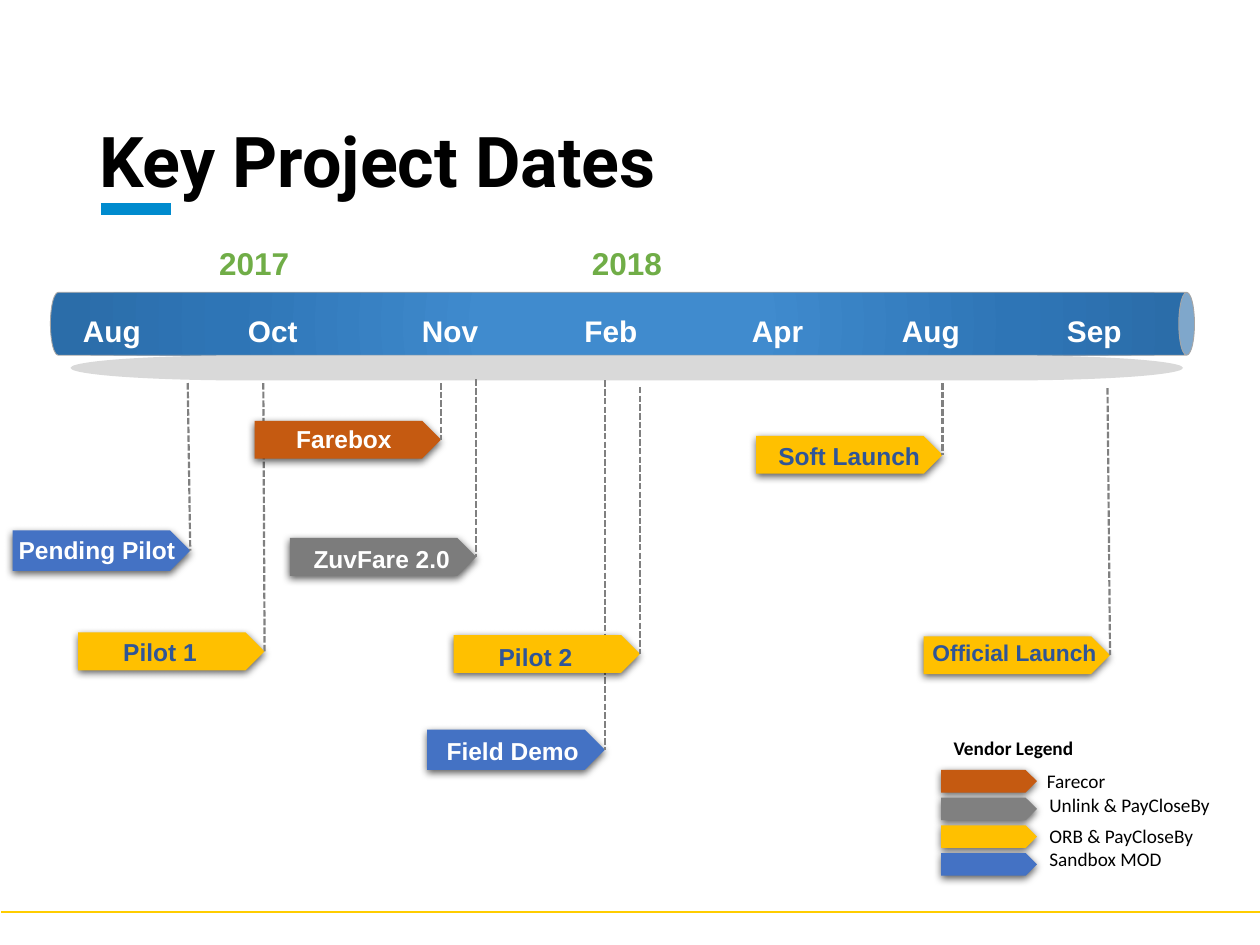
from dataclasses import dataclass

import lxml.etree
import pptx
import pptx.dml.color
import pptx.enum.dml
import pptx.enum.shapes
import pptx.enum.text
import pptx.oxml
import pptx.oxml.ns
import pptx.util

Inches = pptx.util.Inches
Pt = pptx.util.Pt
SHAPE = pptx.enum.shapes.MSO_SHAPE
ALIGN = pptx.enum.text.PP_ALIGN
ANCHOR = pptx.enum.text.MSO_ANCHOR
DASH = pptx.enum.dml.MSO_LINE
qn = pptx.oxml.ns.qn
NS = pptx.oxml.ns.nsdecls("a")

ORANGE, GRAY, YELLOW, BLUE = "C55A11", "808080", "FFC000", "4472C4"
WHITE, BLACK, NAVY, GREEN = "FFFFFF", "000000", "2F5597", "70AD47"


@dataclass
class Milestone:
    text: str
    x: float
    y: float
    w: float
    h: float
    fill: str
    color: str
    label_x: float
    label_y: float
    line_x: float
    line_y: float
    size: float = 14


@dataclass
class LegendLabel:
    lines: list[str]
    x: float
    y: float
    w: float
    h: float
    bold: bool = False


MILESTONES = [
    Milestone("Pilot 1", 0.62, 5.02, 1.48, 0.3, YELLOW, NAVY, 0.43, 5.01, 2.09, 3.04),
    Milestone("Field Demo", 3.39, 5.79, 1.41, 0.32, BLUE, WHITE, 3.23, 5.79, 4.8, 3.02),
    Milestone("Farebox", 2.02, 3.34, 1.48, 0.3, ORANGE, WHITE, 1.89, 3.32, 3.5, 3.04),
    Milestone("ZuvFare 2.0", 2.3, 4.27, 1.48, 0.3, "7C7C7C", WHITE, 2.19, 4.27, 3.78, 3.01),
    Milestone("Pilot 2", 3.6, 5.04, 1.48, 0.3, YELLOW, NAVY, 3.41, 5.05, 5.08, 3.07),
    Milestone("Soft Launch", 6, 3.46, 1.48, 0.3, YELLOW, NAVY, 5.9, 3.45, 7.48, 3.04),
    Milestone("Official Launch", 7.33, 5.05, 1.48, 0.3, YELLOW, NAVY, 7.21, 5.02, 8.79, 3.08, 13),
    Milestone("Pending Pilot", 0.1, 4.21, 1.41, 0.32, BLUE, WHITE, -0.07, 4.2, 1.49, 3.04),
]

LEGEND_LABELS = [
    LegendLabel(["Vendor Legend"], 7.47, 5.79, 1.84, 0.29, True),
    LegendLabel(["Farecor"], 8.21, 6.06, 1.43, 0.29),
    LegendLabel(["Unlink & PayCloseBy"], 8.23, 6.25, 1.77, 0.29),
    LegendLabel(["ORB & PayCloseBy", "Sandbox MOD"], 8.23, 6.49, 1.43, 0.47),
]

MONTHS = ["Aug", "Oct", "Nov", "Feb", "Apr", "Aug", "Sep"]
MONTH_TABS = [1.31, 2.69, 3.98, 5.31, 6.5, 7.81]
CAN_STOPS = [(0, "408BCE"), (23, "408BCE"), (69, "2E75B6"), (97, "2B6DA9")]


def rgb(value: str):
    return pptx.dml.color.RGBColor.from_string(value)


def add_text(slide, lines: list[str], x: float, y: float, w: float, h: float,
             size: float, font: str, color: str, bold: bool = True, align=ALIGN.LEFT):
    tb = slide.shapes.add_textbox(Inches(x), Inches(y), Inches(w), Inches(h))
    tf = tb.text_frame
    tf.word_wrap = True
    for i, line in enumerate(lines):
        p = tf.paragraphs[0] if i == 0 else tf.add_paragraph()
        p.text = line
        p.alignment = align
        p.font.size = Pt(size)
        p.font.name = font
        p.font.bold = bold
        p.font.color.rgb = rgb(color)
    return tb


def add_shape(slide, kind, x: float, y: float, w: float, h: float, fill: str):
    sp = slide.shapes.add_shape(kind, Inches(x), Inches(y), Inches(w), Inches(h))
    sp.shadow.inherit = False
    sp.fill.solid()
    sp.fill.fore_color.rgb = rgb(fill)
    sp.line.fill.background()
    return sp


def add_plate(slide, x: float, y: float, w: float, h: float, fill: str):
    sp = add_shape(slide, SHAPE.PENTAGON, x, y, w, h, fill)
    effects = sp._element.spPr.find(qn("a:effectLst"))
    effects.append(pptx.oxml.parse_xml(
        f'<a:outerShdw {NS} blurRad="57150" dist="19050" dir="5400000" algn="ctr" rotWithShape="0">'
        '<a:srgbClr val="000000"><a:alpha val="63000"/></a:srgbClr></a:outerShdw>'))
    return sp


def add_line(slide, x1: float, y1: float, x2: float, y2: float, color: str, width: float):
    cx = slide.shapes.add_connector(pptx.enum.shapes.MSO_CONNECTOR.STRAIGHT,
                                    Inches(x1), Inches(y1), Inches(x2), Inches(y2))
    cx.line.color.rgb = rgb(color)
    cx.line.width = Pt(width)
    lxml.etree.SubElement(cx._element.spPr, qn("a:effectLst"))
    return cx


def add_milestone(slide, m: Milestone) -> None:
    plate = add_plate(slide, m.x, m.y, m.w, m.h, m.fill)
    line = add_line(slide, m.line_x, m.line_y, m.x + m.w, m.y + m.h / 2, GRAY, 1.25)
    line.line.dash_style = DASH.SQUARE_DOT
    line.end_connect(plate, 3)
    add_text(slide, [m.text], m.label_x, m.label_y, 1.68, 0.34,
             m.size, "Arial", m.color, align=ALIGN.CENTER)


def add_timeline(slide) -> None:
    can = add_shape(slide, SHAPE.CAN, 4.69, -1.97, 0.5, 9.08, "2E75B6")
    can.rotation = 90
    can.line.color.rgb = rgb("A5A5A5")
    can.line.width = Pt(0.5)
    stops = "".join(f'<a:gs pos="{pos * 1000}"><a:srgbClr val="{color}"/></a:gs>'
                    for pos, color in CAN_STOPS)
    spPr = can._element.spPr
    spPr.replace(spPr.find(qn("a:solidFill")), pptx.oxml.parse_xml(
        f'<a:gradFill {NS} rotWithShape="1"><a:gsLst>{stops}</a:gsLst><a:path path="circle">'
        '<a:fillToRect l="50000" t="50000" r="50000" b="50000"/></a:path></a:gradFill>'))

    tb = add_text(slide, ["\t".join(MONTHS)], 0.56, 2.43, 9, 0.39, 17, "Arial", WHITE)
    pPr = tb.text_frame.paragraphs[0]._p.get_or_add_pPr()
    tabs = lxml.etree.Element(qn("a:tabLst"))
    for pos in MONTH_TABS:
        lxml.etree.SubElement(tabs, qn("a:tab"), pos=str(Inches(pos)), algn="l")
    pPr.insert(0, tabs)

    add_shape(slide, SHAPE.FLOWCHART_TERMINATOR, 0.56, 2.82, 8.83, 0.2, "D9D9D9")
    for year, x in (("2017", 1.64), ("2018", 4.6)):
        add_text(slide, [year], x, 1.89, 0.76, 0.4, 18, "Arial", GREEN)


def add_legend(slide) -> None:
    for i, fill in enumerate((ORANGE, GRAY, YELLOW, BLUE)):
        add_plate(slide, 7.47, 6.11 + 0.22 * i, 0.76, 0.18, fill)
    for label in LEGEND_LABELS:
        add_text(slide, label.lines, label.x, label.y, label.w, label.h,
                 11, "Calibri", BLACK, label.bold)


def main() -> None:
    prs = pptx.Presentation()
    prs.slide_width, prs.slide_height = Inches(10), Inches(7.5)
    slide = prs.slides.add_slide(prs.slide_layouts[6])

    add_line(slide, 0.01, 7.24, 10.01, 7.24, "FFCD00", 1)
    add_line(slide, 0.8, 1.66, 1.36, 1.66, "008BCE", 6.75)
    title = add_text(slide, ["Key Project Dates"], 0.69, 0.09, 8.81, 1.57, 40, "Roboto", BLACK)
    title.text_frame.vertical_anchor = ANCHOR.BOTTOM
    title.text_frame.paragraphs[0].line_spacing = 0.9

    add_timeline(slide)
    for m in MILESTONES:
        add_milestone(slide, m)
    add_legend(slide)
    prs.save("out.pptx")


if __name__ == "__main__":
    main()
